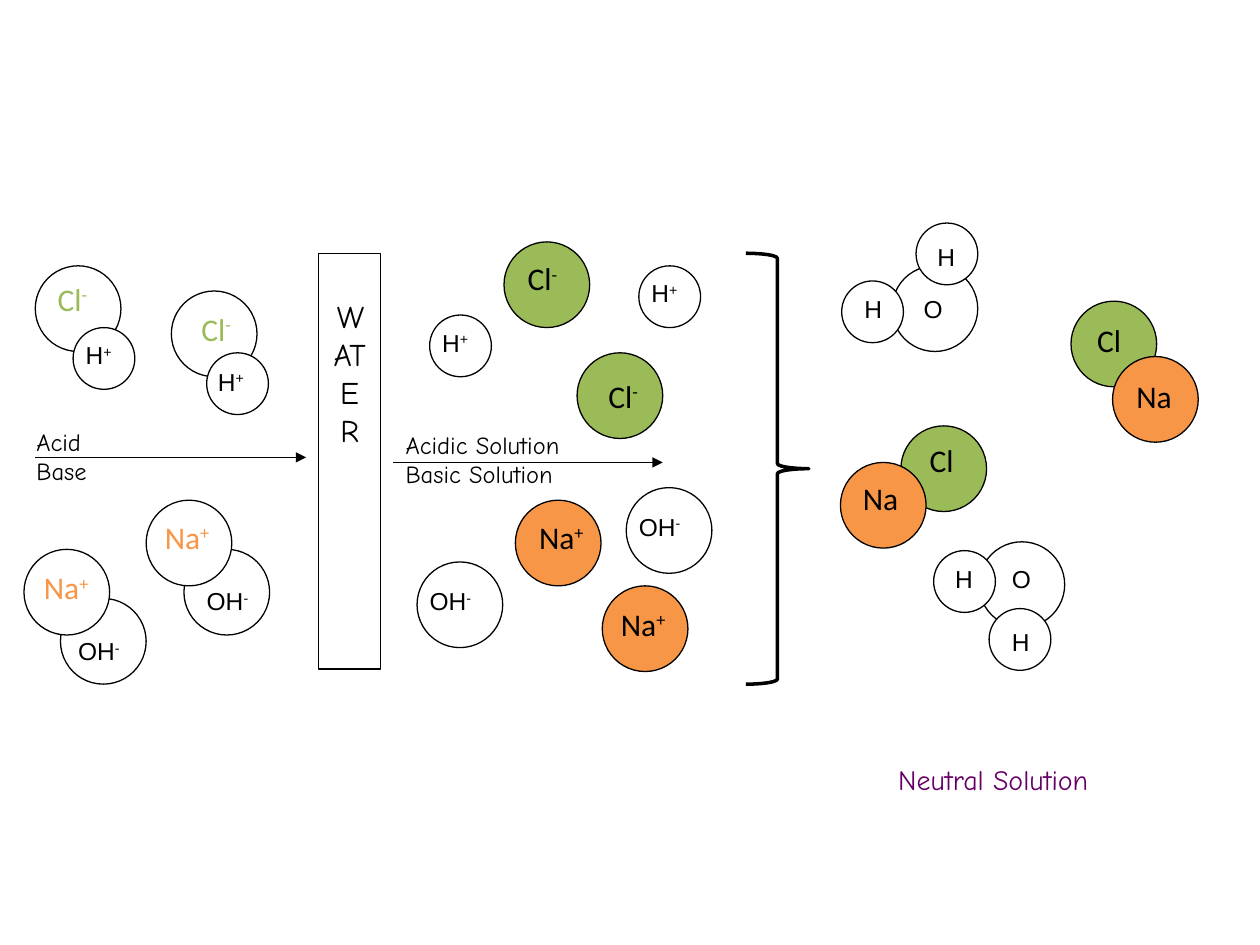
from pptx import Presentation
from pptx.dml.color import RGBColor
from pptx.enum.shapes import MSO_CONNECTOR, MSO_SHAPE
from pptx.enum.text import MSO_ANCHOR, PP_ALIGN
from pptx.oxml.ns import qn
from pptx.util import Inches, Pt
from lxml.etree import SubElement

BLACK, WHITE, GREEN, ORANGE, PURPLE = "000000", "FFFFFF", "9BBB59", "F79646", "660066"
LARGE, SMALL = 0.68, 0.49
HAND = "Comic Neue"

# symbol: diameter, label width, label height, font, size, inset scale
ATOMS = {
    "Cl": (LARGE, 0.64, 0.4, "Calibri", 18, 1),
    "Na": (LARGE, 0.9, 0.4, "Calibri", 18, 1),
    "OH": (LARGE, 0.59, 0.35, "Arial", 14, 0),
    "O": (LARGE, 0.39, 0.35, "Arial", 14, 0),
    "H": (SMALL, 0.39, 0.35, "Arial", 14, 0),
}

ACID_AND_BASE = [
    ("Cl", "-", 0.28, 2.11, 0.36, 2.17, WHITE, GREEN),
    ("H", "+", 0.58, 2.6, 0.68, 2.7, WHITE, BLACK),
    ("Cl", "-", 1.36, 2.31, 1.5, 2.41, WHITE, GREEN),
    ("H", "+", 1.64, 2.8, 1.73, 2.91, WHITE, BLACK),
    ("OH", "-", 0.48, 4.75, 0.62, 5.05, WHITE, BLACK),
    ("Na", "+", 0.19, 4.36, 0.25, 4.46, WHITE, ORANGE),
    ("OH", "-", 1.46, 4.36, 1.64, 4.65, WHITE, BLACK),
    ("Na", "+", 1.16, 3.97, 1.21, 4.06, WHITE, ORANGE),
]
IONS_IN_WATER = [
    ("H", "+", 3.41, 2.5, 3.51, 2.6, WHITE, BLACK),
    ("H", "+", 5.07, 2.11, 5.17, 2.21, WHITE, BLACK),
    ("Cl", "-", 4, 1.92, 4.09, 2.01, GREEN, BLACK),
    ("Cl", "-", 4.58, 2.8, 4.73, 2.94, GREEN, BLACK),
    ("OH", "-", 4.97, 3.87, 5.07, 4.06, WHITE, BLACK),
    ("OH", "-", 3.31, 4.46, 3.41, 4.65, WHITE, BLACK),
    ("Na", "+", 4.09, 3.97, 4.18, 4.06, ORANGE, BLACK),
    ("Na", "+", 4.78, 4.65, 4.83, 4.75, ORANGE, BLACK),
]
WATER_AND_SALT = [
    ("O", "", 7.08, 2.11, 7.33, 2.33, WHITE, BLACK),
    ("H", "", 6.68, 2.23, 6.86, 2.33, WHITE, BLACK),
    ("H", "", 7.27, 1.77, 7.44, 1.92, WHITE, BLACK),
    ("O", "", 7.77, 4.3, 8.03, 4.48, WHITE, BLACK),
    ("H", "", 7.41, 4.37, 7.58, 4.48, WHITE, BLACK),
    ("H", "", 7.85, 4.83, 8.03, 4.98, WHITE, BLACK),
    ("Cl", "", 7.15, 3.38, 7.28, 3.45, GREEN, BLACK),
    ("Na", "", 6.67, 3.67, 6.75, 3.75, ORANGE, BLACK),
    ("Cl", "", 8.5, 2.39, 8.61, 2.5, GREEN, BLACK),
    ("Na", "", 8.83, 2.83, 8.92, 2.94, ORANGE, BLACK),
]


def rgb(value):
    return RGBColor.from_string(value)


def write(sp, text, size=14, font=HAND, color=BLACK, charge="", align=PP_ALIGN.LEFT,
          inset=1, top=0.05):
    tf = sp.text_frame
    tf.word_wrap = True
    tf.vertical_anchor = MSO_ANCHOR.TOP
    tf.margin_left = tf.margin_right = Inches(0.1 * inset)
    tf.margin_top, tf.margin_bottom = Inches(top * inset), Inches(0.05 * inset)
    for i, line in enumerate(text.split("\n")):
        p = tf.add_paragraph() if i else tf.paragraphs[0]
        p.alignment = align
        for part in filter(None, (line, charge)):
            r = p.add_run()
            r.text = part
            r.font.size, r.font.name = Pt(size), font
            r.font.color.rgb = rgb(color)
            if part == charge:
                r.font._element.set("baseline", "30000")


def add_label(slide, x, y, w, h, text, **fmt):
    write(slide.shapes.add_textbox(Inches(x), Inches(y), Inches(w), Inches(h)), text, **fmt)


def add_outline(slide, kind, x, y, w, h, fill=None, weight=0.75):
    sp = slide.shapes.add_shape(kind, Inches(x), Inches(y), Inches(w), Inches(h))
    sp.shadow.inherit = False
    if fill:
        sp.fill.solid()
        sp.fill.fore_color.rgb = rgb(fill)
    else:
        sp.fill.background()
    sp.line.color.rgb = rgb(BLACK)
    sp.line.width = Pt(weight)
    return sp


def add_atom(slide, symbol, charge, x, y, label_x, label_y, fill, color):
    d, w, h, font, size, inset = ATOMS[symbol]
    add_outline(slide, MSO_SHAPE.OVAL, x, y, d, d, fill)
    add_label(slide, label_x, label_y, w, h, symbol, charge=charge, font=font,
              size=size, color=color, inset=inset)


def add_arrow(slide, x1, x2, y):
    line = slide.shapes.add_connector(
        MSO_CONNECTOR.STRAIGHT, Inches(x1), Inches(y), Inches(x2), Inches(y))
    line.line.color.rgb = rgb(BLACK)
    line.line.width = Pt(0.75)
    SubElement(line.line._get_or_add_ln(), qn("a:tailEnd"), type="triangle")
    SubElement(line._element.spPr, qn("a:effectLst"))


def main():
    prs = Presentation()
    prs.slide_width, prs.slide_height = Inches(10), Inches(7.5)
    slide = prs.slides.add_slide(prs.slide_layouts[6])

    water = add_outline(slide, MSO_SHAPE.RECTANGLE, 2.53, 2.01, 0.49, 3.3)
    write(water, "WATER", size=18, align=PP_ALIGN.CENTER, top=0.35)
    add_arrow(slide, 0.28, 2.43, 3.63)
    add_arrow(slide, 3.12, 5.26, 3.67)
    add_label(slide, 0.19, 3.34, 0.88, 0.63, "Acid\nBase")
    add_label(slide, 3.12, 3.36, 1.72, 0.49, "Acidic Solution\nBasic Solution")

    for atom in ACID_AND_BASE + IONS_IN_WATER + WATER_AND_SALT:
        add_atom(slide, *atom)

    brace = add_outline(slide, MSO_SHAPE.RIGHT_BRACE, 5.92, 2.01, 0.5, 3.42, weight=2)
    brace.adjustments[0], brace.adjustments[1] = 0.08, 0.5
    add_label(slide, 7.03, 6, 2.39, 0.37, "Neutral Solution", size=16, color=PURPLE)
    prs.save("out.pptx")


if __name__ == "__main__":
    main()
